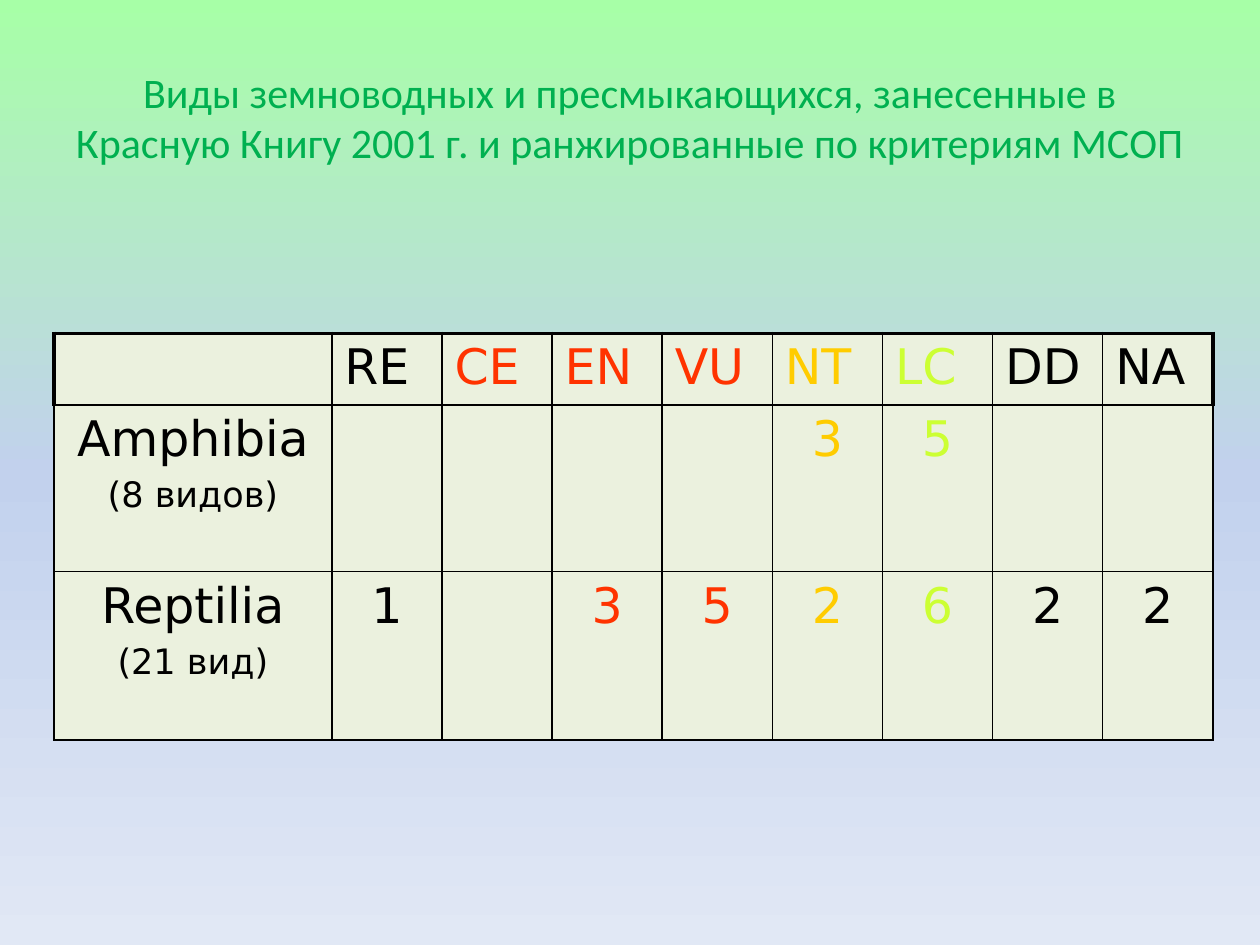
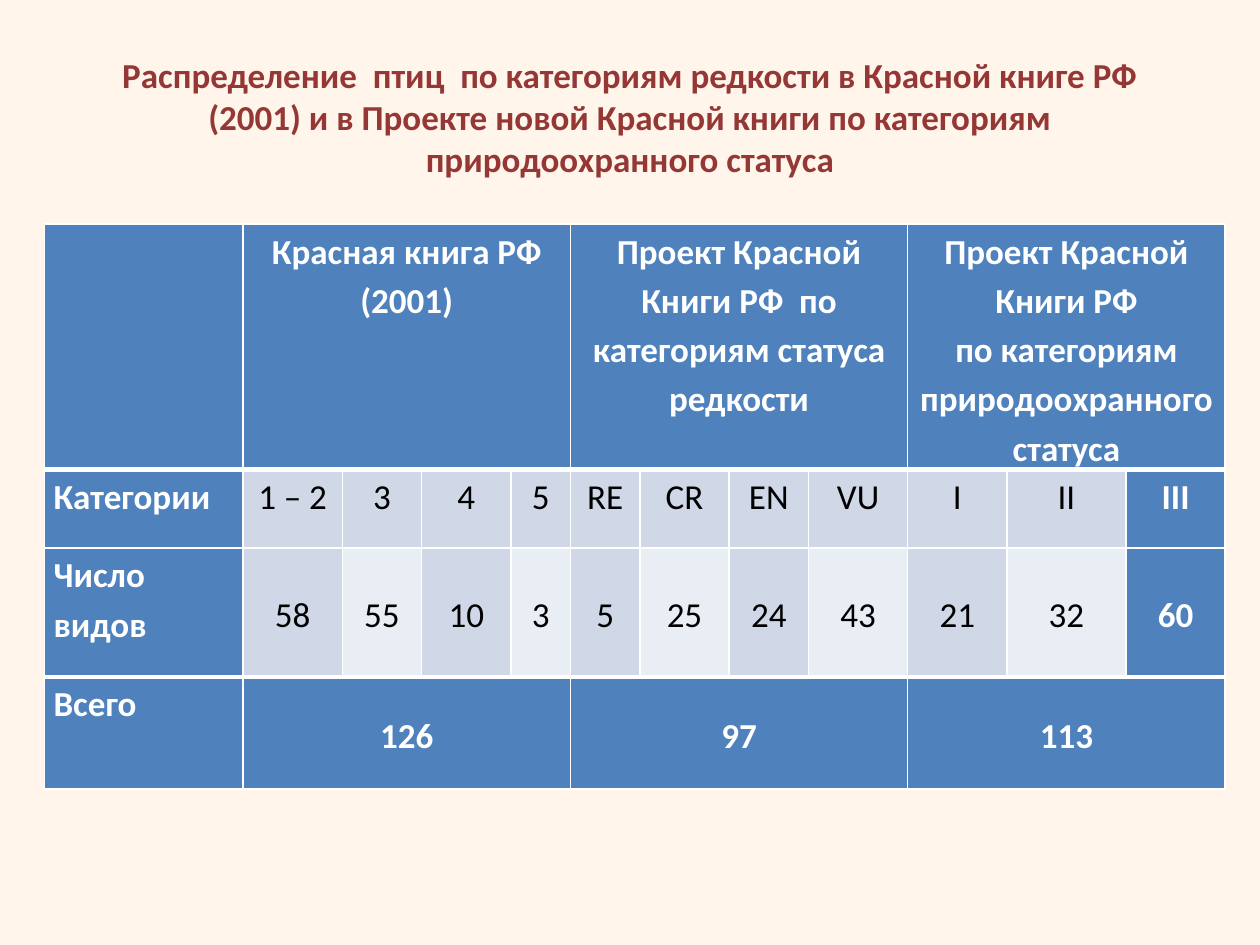
from copy import deepcopy
from lxml import etree
from pptx import Presentation
from pptx.dml.color import RGBColor
from pptx.enum.text import MSO_ANCHOR, PP_ALIGN
from pptx.oxml.ns import qn
from pptx.util import Cm, Pt

BLACK, WHITE = "000000", "FFFFFF"
RED, AMBER, LIME = "FF3300", "FFCC00", "CCFF33"
PALE_GREEN = "EBF1DE"
BLUE, BLUE_TINT, BLUE_PALE = "4F81BD", "D0D8E8", "E9EDF4"


def rgb(color):
    return RGBColor.from_string(color)


def write(holder, text, size, font, color, bold=False, align=PP_ALIGN.CENTER):
    """Set the text of a frame or cell and format each of its paragraphs."""
    frame = holder.text_frame
    frame.text = text
    for paragraph in frame.paragraphs:
        paragraph.alignment = align
        for run in paragraph.runs:
            run.font.size, run.font.name, run.font.bold = Pt(size), font, bold
            run.font.color.rgb = rgb(color)
    return frame


deck = Presentation()
deck.slide_width, deck.slide_height = Cm(25.4), Cm(19.05)

# Shared frame of both slides: title and an unbanded, sized, bordered table
pages = [
    dict(title="Виды земноводных и пресмыкающихся, занесенные в Красную Книгу 2001 г. "
               "и ранжированные по критериям МСОП",
         size=24, color="00B050", bold=False, left=1.09, top=6.72, line=BLACK,
         widths=[5.6] + [2.22] * 8, heights=[1.41, 3.36, 3.4],
         row_lines=[2.25, 1, 1, 1]),
    dict(title="Распределение  птиц  по категориям редкости в Красной книге РФ (2001) "
               "и в Проекте новой Красной книги по категориям природоохранного статуса",
         size=20, color="953735", bold=True, left=0.9, top=4.52, line=WHITE,
         widths=[4, 2, 1.6, 1.8, 1.2, 1.4, 1.8, 1.6, 2, 2, 2.4, 2],
         heights=[4.95, 1.58, 2.6, 2.26], row_lines=[1, 3, 1, 3, 1]),
]
slides, tables = [], []
for page in pages:
    slide = deck.slides.add_slide(deck.slide_layouts[6])
    title = slide.shapes.add_textbox(Cm(1.27), Cm(0.76), Cm(22.86), Cm(3.18))
    heading = write(title, page["title"], page["size"], "Calibri", page["color"], page["bold"])
    heading.word_wrap = True
    heading.vertical_anchor = MSO_ANCHOR.MIDDLE

    widths, heights = page["widths"], page["heights"]
    table = slide.shapes.add_table(
        len(heights), len(widths), Cm(page["left"]), Cm(page["top"]),
        Cm(sum(widths)), Cm(sum(heights))).table
    table.first_row = table.horz_banding = False
    for column, width in zip(table.columns, widths):
        column.width = Cm(width)
    for r, height in enumerate(heights):
        table.rows[r].height = Cm(height)
        for c in range(len(widths)):
            # The first table has a heavy outline round its header row
            heavy = page["line"] == BLACK and r == 0
            left = 2.25 if heavy and c == 0 else 1
            right = 2.25 if heavy and c == len(widths) - 1 else 1
            edges = {"a:lnL": left, "a:lnR": right,
                     "a:lnT": page["row_lines"][r], "a:lnB": page["row_lines"][r + 1]}
            properties = table.cell(r, c)._tc.get_or_add_tcPr()
            for edge, points in edges.items():
                line = etree.SubElement(properties, qn(edge), w=str(Pt(points)))
                fill = etree.SubElement(line, qn("a:solidFill"))
                etree.SubElement(fill, qn("a:srgbClr"), val=page["line"])
    slides.append(slide)
    tables.append(table)

# Backgrounds: green-to-blue gradient, then pale peach
sky = slides[0].background.fill
sky.gradient()
sky.gradient_angle = 270
stop_list = next(slides[0]._element.iter(qn("a:gsLst")))
stop_list.insert(1, deepcopy(stop_list[0]))
for stop, position, color in zip(sky.gradient_stops, (0, 0.5, 1), ("A7FFA7", "C2D1ED", "E1E8F5")):
    stop.position = position
    stop.color.rgb = rgb(color)
peach = slides[1].background.fill
peach.solid()
peach.fore_color.rgb = rgb("FFF5EB")

# Slide 1: species by IUCN criterion (code, colour, amphibians, reptiles)
criteria = [
    ("RE", BLACK, "", "1"), ("CE", RED, "", ""), ("EN", RED, "", "3"),
    ("VU", RED, "", "5"), ("NT", AMBER, "3", "2"), ("LC", LIME, "5", "6"),
    ("DD", BLACK, "", "2"), ("NA", BLACK, "", "2"),
]
herps = tables[0]
for cell in herps.iter_cells():
    cell.fill.solid()
    cell.fill.fore_color.rgb = rgb(PALE_GREEN)
for r, group in enumerate(["Amphibia\n(8 видов)", "Reptilia\n(21 вид)"], 1):
    species_count = write(herps.cell(r, 0), group, 28, "DejaVu Sans", BLACK).paragraphs[1]
    species_count.space_before = Pt(4)
    species_count.runs[0].font.size = Pt(20)
for c, (code, color, *counts) in enumerate(criteria, 1):
    write(herps.cell(0, c), code, 28, "DejaVu Sans", color, align=PP_ALIGN.LEFT)
    for r, count in enumerate(counts, 1):
        if count:
            write(herps.cell(r, c), count, 28, "DejaVu Sans", color)

# Slide 2: birds by category (heading, total, categories with counts)
books = [
    ("Красная книга РФ (2001)", "126",
     [("1 – 2", "58"), ("3", "55"), ("4", "10"), ("5", "3")]),
    ("Проект Красной Книги РФ  по категориям статуса редкости", "97",
     [("RE", "5"), ("CR", "25"), ("EN", "24"), ("VU", "43")]),
    ("Проект Красной Книги РФ\nпо категориям природоохранного статуса", "113",
     [("I", "21"), ("II", "32"), ("III", "60")]),
]
birds = tables[1]
for cell in birds.iter_cells():
    cell.fill.solid()
    cell.fill.fore_color.rgb = rgb(BLUE)
    cell.margin_left = cell.margin_right = Cm(0.18)
    cell.margin_top = cell.margin_bottom = 0
for r, label in enumerate(["Категории", "Число видов", "Всего"], 1):
    write(birds.cell(r, 0), label, 20, "Calibri", WHITE, True, PP_ALIGN.JUSTIFY)

c = 1
for book, total, categories in books:
    last = c + len(categories) - 1
    for r, text in ((0, book), (3, total)):
        birds.cell(r, c).merge(birds.cell(r, last))
        write(birds.cell(r, c), text, 20, "Calibri", WHITE, True)
    birds.cell(3, c).vertical_anchor = MSO_ANCHOR.MIDDLE
    for category, count in categories:
        strong = category == "III"
        count_fill = BLUE_TINT if c % 2 else BLUE_PALE
        for r, text, fill in ((1, category, BLUE_TINT), (2, count, count_fill)):
            cell = birds.cell(r, c)
            write(cell, text, 20, "Calibri", WHITE if strong else BLACK, strong)
            if not strong:
                cell.fill.fore_color.rgb = rgb(fill)
        birds.cell(2, c).vertical_anchor = MSO_ANCHOR.MIDDLE
        c += 1
for cell in birds.iter_cells():
    for paragraph in cell.text_frame.paragraphs:
        paragraph.line_spacing = 1.15

deck.save("out.pptx")
